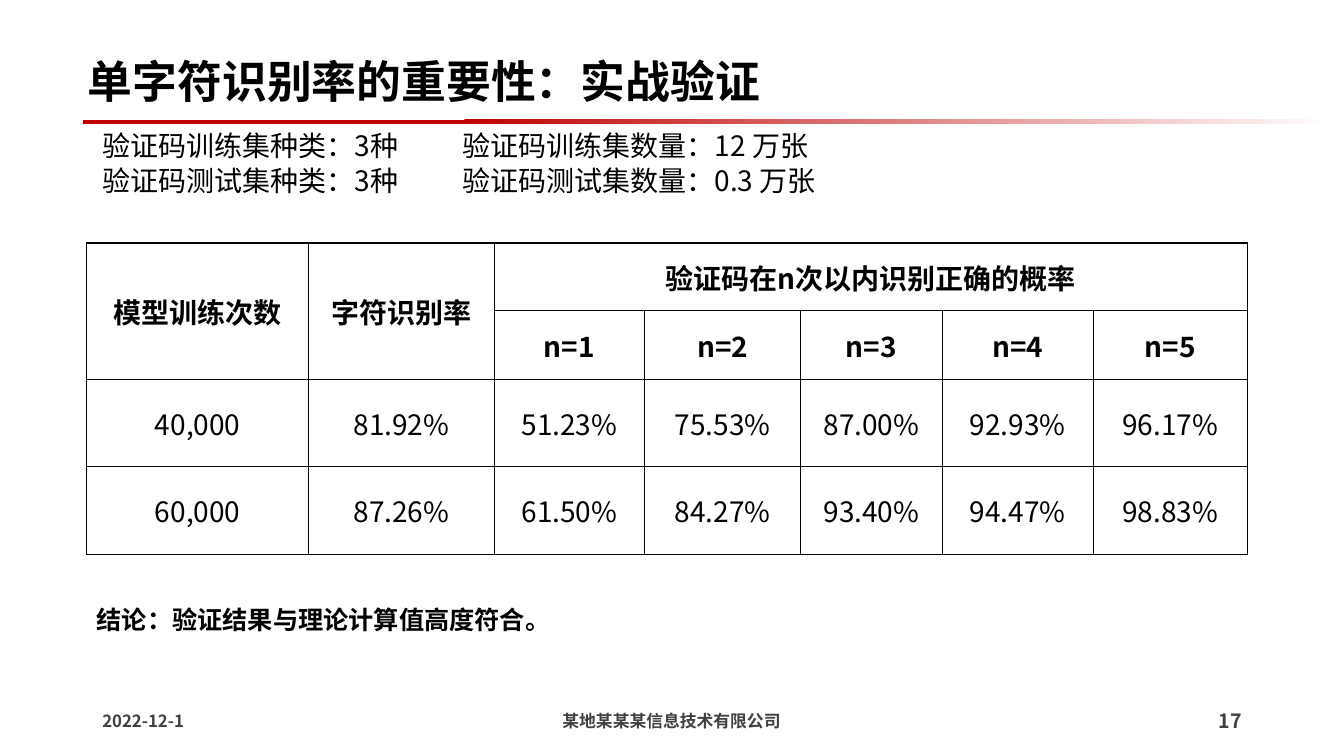
import pptx
import pptx.dml.color
import pptx.enum.shapes
import pptx.enum.text
import pptx.oxml
import pptx.oxml.ns
import pptx.util
from lxml import etree

Pt = pptx.util.Pt
ALIGN = pptx.enum.text.PP_ALIGN
ANCHOR = pptx.enum.text.MSO_ANCHOR
FONT = "Noto Sans CJK SC"
COLORS = {"text": "000000", "footer": "404040", "rule": "C00000", "fade": "FFFFFF"}

COL_WIDTHS = [158.5, 132.5, 107.5, 111.5, 101, 108, 110]
ROW_HEIGHTS = [48.5, 49, 62.5, 62.5]
ROWS = [
    ["模型训练次数", "字符识别率", "验证码在n次以内识别正确的概率", "", "", "", ""],
    ["", ""] + [f"n={n}" for n in range(1, 6)],
    ["40,000", "81.92%", "51.23%", "75.53%", "87.00%", "92.93%", "96.17%"],
    ["60,000", "87.26%", "61.50%", "84.27%", "93.40%", "94.47%", "98.83%"],
]
HEADER_ROWS = 2


def rgb(name):
    return pptx.dml.color.RGBColor.from_string(COLORS[name])


def add_run(p, text, size, bold=False, color="text"):
    r = p.add_run()
    r.text = text
    r.font.size, r.font.bold, r.font.name = Pt(size), bold, FONT
    r.font.color.rgb = rgb(color)
    ea = etree.SubElement(r.font._element, pptx.oxml.ns.qn("a:ea"))
    ea.set("typeface", FONT)


def add_text(s, box, lines, size, bold=False, color="text", align=ALIGN.LEFT,
             anchor=ANCHOR.MIDDLE, spacing=None, gap=0, tab=None):
    tf = s.shapes.add_textbox(*map(Pt, box)).text_frame
    tf.word_wrap = True
    tf.vertical_anchor = anchor
    for i, line in enumerate(lines):
        p = tf.add_paragraph() if i else tf.paragraphs[0]
        p.alignment = align
        if spacing:
            p.line_spacing = spacing
        if i:
            p.space_before = Pt(gap)
        if tab:
            tabs = etree.SubElement(p._p.get_or_add_pPr(), pptx.oxml.ns.qn("a:tabLst"))
            stop = etree.SubElement(tabs, pptx.oxml.ns.qn("a:tab"))
            stop.set("pos", str(Pt(tab)))
            stop.set("algn", "l")
        add_run(p, line, size, bold, color)


def set_title(s, box, text):
    title = s.shapes.title
    title.left, title.top, title.width, title.height = map(Pt, box)
    tf = title.text_frame
    tf.auto_size = pptx.enum.text.MSO_AUTO_SIZE.NONE
    tf.vertical_anchor = ANCHOR.MIDDLE
    p = tf.paragraphs[0]
    p.alignment, p.line_spacing = ALIGN.LEFT, 0.9
    add_run(p, text, 32, True)


def add_rule(s, box):
    rule = s.shapes.add_shape(pptx.enum.shapes.MSO_SHAPE.RECTANGLE, *map(Pt, box))
    rule.shadow.inherit = False
    rule.line.fill.background()
    rule.fill.gradient()
    rule.fill.gradient_angle = 3
    for stop, color, position in zip(rule.fill.gradient_stops, ("rule", "fade"), (0.3, 1)):
        stop.color.rgb = rgb(color)
        stop.position = position


def set_borders(cell):
    tcPr = cell._tc.get_or_add_tcPr()
    for side in ("lnL", "lnR", "lnT", "lnB"):
        tcPr.append(pptx.oxml.parse_xml(
            f'<a:{side} {pptx.oxml.ns.nsdecls("a")} w="{Pt(1)}"><a:solidFill>'
            f'<a:srgbClr val="{COLORS["text"]}"/></a:solidFill></a:{side}>'))


def add_results(s, left, top):
    frame = s.shapes.add_table(len(ROWS), len(COL_WIDTHS), Pt(left), Pt(top),
                               Pt(sum(COL_WIDTHS)), Pt(sum(ROW_HEIGHTS)))
    table = frame.table
    table.first_row = table.horz_banding = False
    for col, width in zip(table.columns, COL_WIDTHS):
        col.width = Pt(width)
    for row, height in zip(table.rows, ROW_HEIGHTS):
        row.height = Pt(height)
    for i, values in enumerate(ROWS):
        for j, value in enumerate(values):
            cell = table.cell(i, j)
            set_borders(cell)
            cell.fill.background()
            cell.vertical_anchor = ANCHOR.MIDDLE
            if value:
                p = cell.text_frame.paragraphs[0]
                p.alignment = ALIGN.CENTER
                add_run(p, value, 20, i < HEADER_ROWS)
    # Two tall headers and one wide header
    for j in range(2):
        table.cell(0, j).merge(table.cell(1, j))
    table.cell(0, 2).merge(table.cell(0, len(COL_WIDTHS) - 1))


def main():
    prs = pptx.Presentation()
    prs.slide_width, prs.slide_height = Pt(960), Pt(540)
    s = prs.slides.add_slide(prs.slide_layouts[5])

    # Heading and data sets
    set_title(s, (55.5, 28, 827, 64), "单字符识别率的重要性：实战验证")
    add_text(s, (66, 93, 827, 61),
             ["验证码训练集种类：3种\t验证码训练集数量：12 万张",
              "验证码测试集种类：3种\t验证码测试集数量：0.3 万张"],
             20, anchor=ANCHOR.TOP, spacing=0.8, gap=6, tab=257)
    add_rule(s, (59, 85.5, 893, 3))

    # Results and conclusion
    add_results(s, 62, 173.5)
    add_text(s, (62, 422.5, 467, 40), ["结论：验证结果与理论计算值高度符合。"], 18, True)

    # Footer
    add_text(s, (66, 500.5, 87, 29), ["2022-12-1"], 12, True, "footer")
    add_text(s, (381.5, 500.5, 196.5, 29), ["某地某某某信息技术有限公司"], 12, True,
             "footer", ALIGN.CENTER)
    add_text(s, (828, 500.5, 66, 29), ["17"], 14, True, "footer", ALIGN.RIGHT)

    prs.save("out.pptx")


if __name__ == "__main__":
    main()
